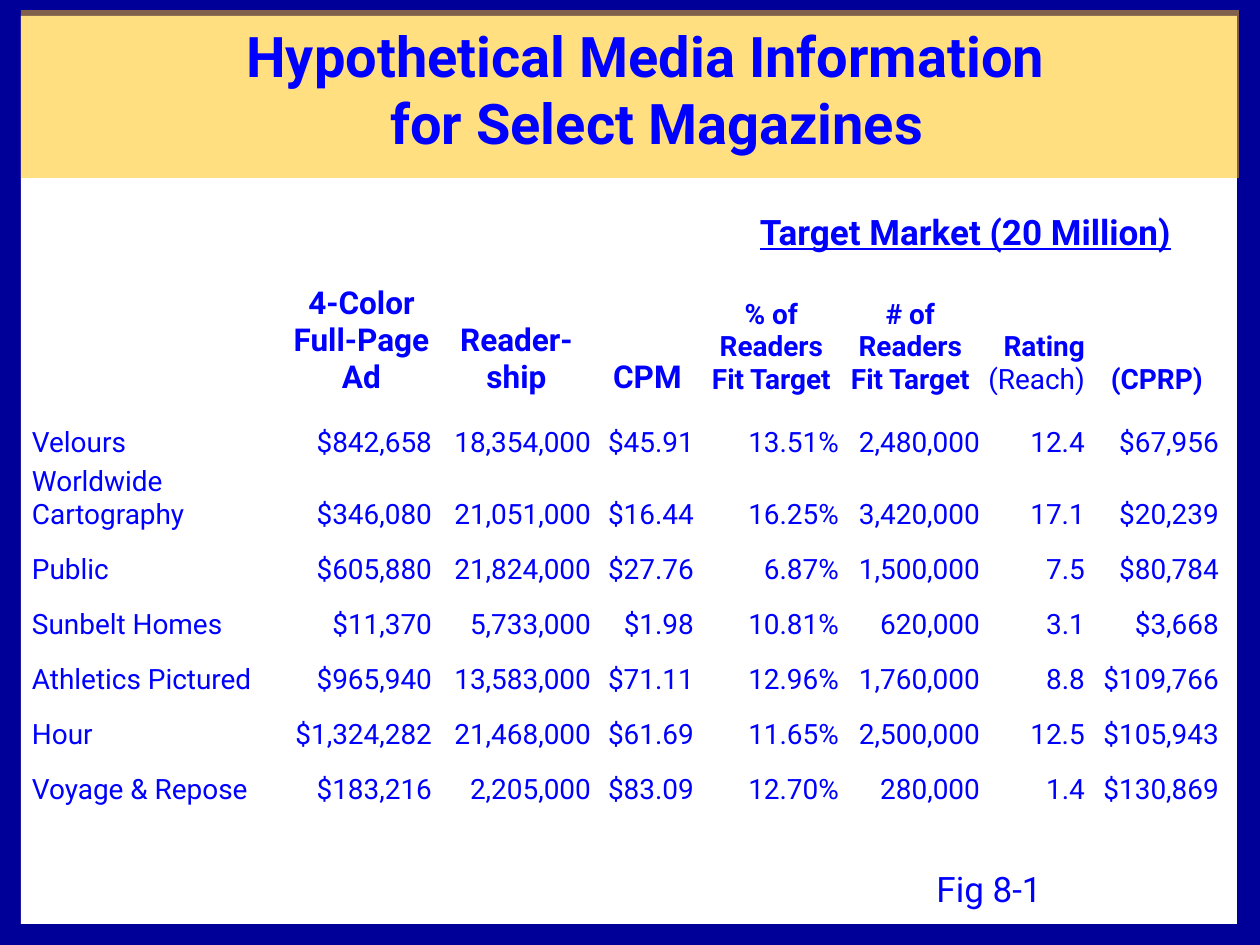
"""Build a slide with a table of media information for select magazines."""
from lxml import etree
from pptx import Presentation
from pptx.dml.color import RGBColor
from pptx.enum.shapes import MSO_SHAPE
from pptx.enum.text import MSO_ANCHOR, PP_ALIGN
from pptx.oxml.ns import qn
from pptx.util import Emu, Pt

RECTANGLE = MSO_SHAPE.RECTANGLE
TOP, BOTTOM = MSO_ANCHOR.TOP, MSO_ANCHOR.BOTTOM
LEFT, CENTER, RIGHT = PP_ALIGN.LEFT, PP_ALIGN.CENTER, PP_ALIGN.RIGHT

FONT = "Roboto"
NAVY = RGBColor(0x00, 0x00, 0x99)
WHITE = RGBColor(0xFF, 0xFF, 0xFF)
GOLD = RGBColor(0xFF, 0xC0, 0x00)
BLUE = RGBColor(0x00, 0x00, 0xFF)

TITLE_LINES = [("Hypothetical Media Information", 32), ("for Select Magazines", 54)]
FIGURE_LABEL = "Fig 8-1"
GROUP_HEADING = "Target Market (20 Million)"
GROUP_START = 4
HEADINGS = [
    ("4-Color Full-Page Ad", 18),
    ("Reader-ship", 18),
    ("CPM", 18),
    ("% of Readers Fit Target", 16),
    ("# of Readers Fit Target", 16),
    ("Rating ", 16),
    ("(CPRP)", 16),
]
RATING_COLUMN = 6
RATING_NOTE = "(Reach)"
MAGAZINES = [
    ("Velours", "$842,658", "18,354,000", "$45.91", "13.51%", "2,480,000", "12.4", "$67,956"),
    ("Worldwide Cartography", "$346,080", "21,051,000", "$16.44", "16.25%", "3,420,000", "17.1", "$20,239"),
    ("Public", "$605,880", "21,824,000", "$27.76", "6.87%", "1,500,000", "7.5", "$80,784"),
    ("Sunbelt Homes", "$11,370", "5,733,000", "$1.98", "10.81%", "620,000", "3.1", "$3,668"),
    ("Athletics Pictured", "$965,940", "13,583,000", "$71.11", "12.96%", "1,760,000", "8.8", "$109,766"),
    ("Hour", "$1,324,282", "21,468,000", "$61.69", "11.65%", "2,500,000", "12.5", "$105,943"),
    ("Voyage & Repose", "$183,216", "2,205,000", "$83.09", "12.70%", "280,000", "1.4", "$130,869"),
]
COLUMN_WIDTHS = [251, 159, 151, 111, 137, 141, 105, 142]
ROW_HEIGHTS = [55, 142, 63, 72] + [55] * 5
CELL_INSET, MONEY_INSET = 1, 9


def px(length):
    return Emu(round(length * 914400 / 126))


def write(paragraph, text, size=16, bold=False, underline=False, align=LEFT):
    paragraph.alignment = align
    run = paragraph.add_run()
    run.text = text
    run.font.name = FONT
    run.font.size = Pt(size)
    run.font.bold = bold
    run.font.underline = underline
    run.font.color.rgb = BLUE


def add_panel(slide, box, color, opacity=100):
    panel = slide.shapes.add_shape(RECTANGLE, *map(px, box))
    panel.shadow.inherit = False
    panel.line.fill.background()
    panel.fill.solid()
    panel.fill.fore_color.rgb = color
    if opacity < 100:
        color_element = panel.element.spPr.find(qn("a:solidFill"))[0]
        etree.SubElement(color_element, qn("a:alpha"), val=str(opacity * 1000))


def place_title(slide):
    title = slide.shapes.title
    title.left, title.top, title.width, title.height = map(px, (42, 15, 1176, 149))
    title.element.getparent().append(title.element)
    frame = title.text_frame
    frame.vertical_anchor = TOP
    for index, (line, indent) in enumerate(TITLE_LINES):
        paragraph = frame.add_paragraph() if index else frame.paragraphs[0]
        write(paragraph, line, size=32, bold=True, align=CENTER)
        paragraph._p.get_or_add_pPr().set("marL", str(px(indent)))


def add_media_table(slide):
    media = slide.shapes.add_table(
        len(ROW_HEIGHTS), len(COLUMN_WIDTHS), px(31), px(199),
        px(sum(COLUMN_WIDTHS)), px(sum(ROW_HEIGHTS))).table
    media.first_row = media.horz_banding = False
    for column, width in zip(media.columns, COLUMN_WIDTHS):
        column.width = px(width)
    for row, height in zip(media.rows, ROW_HEIGHTS):
        row.height = px(height)
    for cell in media.iter_cells():
        cell.fill.background()
        cell.vertical_anchor = BOTTOM
        cell.margin_left = cell.margin_right = cell.margin_top = px(CELL_INSET)
        cell.margin_bottom = 0

    group = media.cell(0, GROUP_START)
    group.merge(media.cell(0, len(COLUMN_WIDTHS) - 1))
    write(group.text_frame.paragraphs[0], GROUP_HEADING,
          size=20, bold=True, underline=True, align=CENTER)

    for column, (heading, size) in enumerate(HEADINGS, 1):
        paragraph = media.cell(1, column).text_frame.paragraphs[0]
        align = RIGHT if column == RATING_COLUMN else CENTER
        write(paragraph, heading, size=size, bold=True, align=align)
        if column == RATING_COLUMN:
            write(paragraph, RATING_NOTE, size=size, align=align)

    for row, magazine in enumerate(MAGAZINES, 2):
        for column, value in enumerate(magazine):
            cell = media.cell(row, column)
            if value.startswith("$"):
                cell.margin_right = px(MONEY_INSET)
            write(cell.text_frame.paragraphs[0], value, align=RIGHT if column else LEFT)


def main():
    deck = Presentation()
    deck.slide_width, deck.slide_height = px(1260), px(945)
    slide = deck.slides.add_slide(deck.slide_layouts[5])
    add_panel(slide, (0, -10, 1260, 964), NAVY)
    add_panel(slide, (21, 16, 1216, 908), WHITE)
    add_panel(slide, (21, 10, 1218, 168), GOLD, opacity=50)
    add_media_table(slide)
    place_title(slide)
    figure = slide.shapes.add_textbox(*map(px, (924, 861, 134, 55)))
    figure.text_frame.word_wrap = False
    write(figure.text_frame.paragraphs[0], FIGURE_LABEL, size=20)
    deck.save("out.pptx")


if __name__ == "__main__":
    main()
